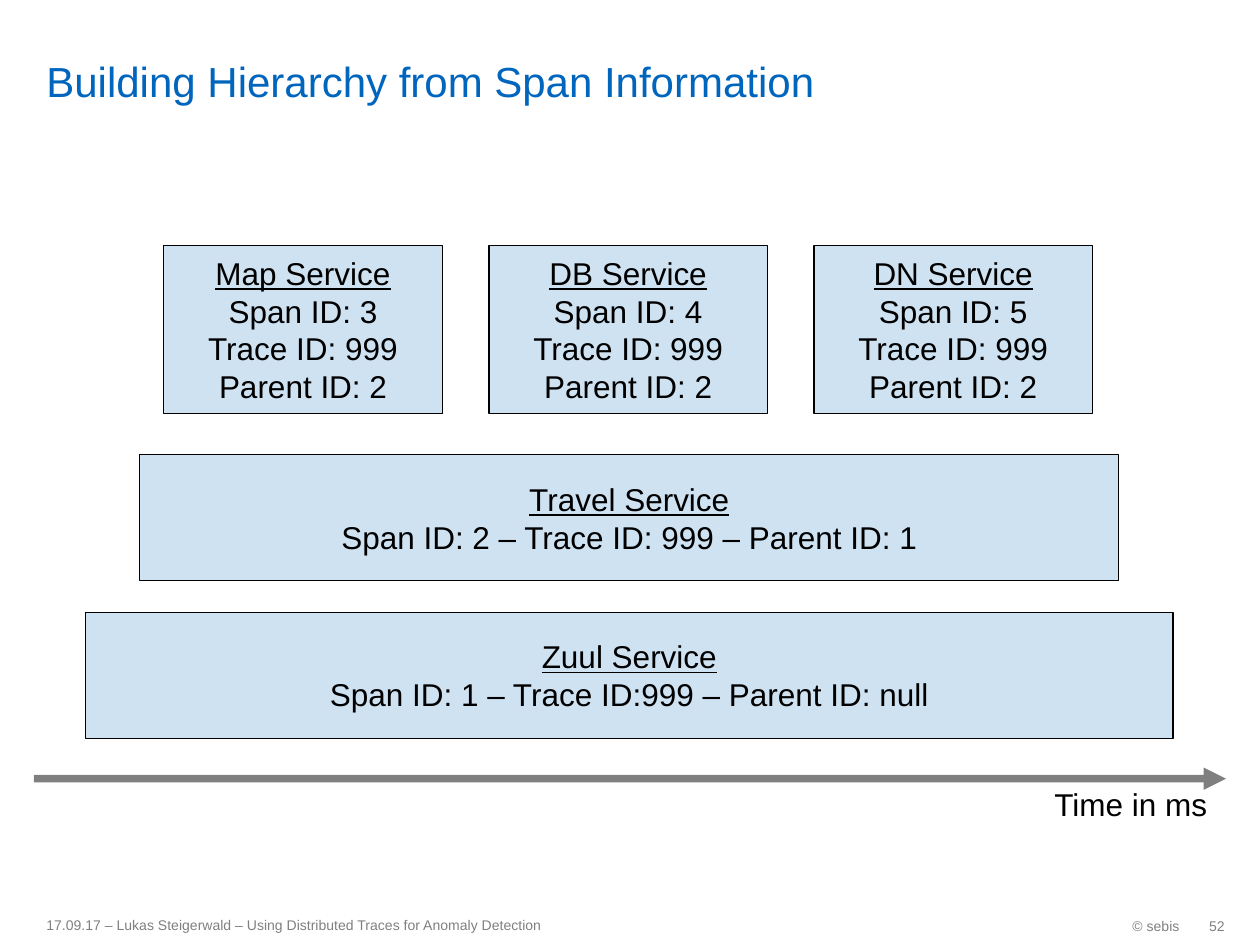
from lxml import etree
from pptx import Presentation
from pptx.dml.color import RGBColor
from pptx.enum.shapes import MSO_CONNECTOR, MSO_SHAPE
from pptx.enum.text import MSO_ANCHOR, PP_ALIGN
from pptx.oxml.ns import qn
from pptx.util import Inches, Pt

BLUE = RGBColor(0x00, 0x65, 0xBD)
BLACK = RGBColor(0, 0, 0)
GRAY = RGBColor(0x80, 0x80, 0x80)
LEFT, CENTER, RIGHT = PP_ALIGN.LEFT, PP_ALIGN.CENTER, PP_ALIGN.RIGHT
TOP, MIDDLE, BOTTOM = MSO_ANCHOR.TOP, MSO_ANCHOR.MIDDLE, MSO_ANCHOR.BOTTOM

# Content
TITLE = "Building Hierarchy from Span Information"
FOOTER = "17.09.17 – Lukas Steigerwald – Using Distributed Traces for Anomaly Detection"
# Wide spans: left, top, width, lines
WIDE_SPANS = [
    (0.68, 4.86, 8.63, ["Zuul Service", "Span ID: 1 – Trace ID:999 – Parent ID: null"]),
    (1.11, 3.61, 7.77, ["Travel Service", "Span ID: 2 – Trace ID: 999 – Parent ID: 1"]),
]
CHILD_SPANS = [("Map Service", 3), ("DB Service", 4), ("DN Service", 5)]
CHILD_LEFT, CHILD_TOP, CHILD_PITCH = 1.3, 1.95, 2.58
CHILD_W, CHILD_H = 2.21, 1.33
AXIS_Y = 6.18
# Labels: text, box, size, colour, alignment, anchor, margins
PLAIN = (0.1, 0.05, 0.1, 0.05)
LABELS = [
    (TITLE, (0.27, 0.05, 8.24, 0.79), 24, BLUE, LEFT, BOTTOM, (0.1, 0, 0.1, 0)),
    ("Time in ms", (8.27, AXIS_Y, 1.43, 0.4), 18, BLACK, LEFT, TOP, PLAIN),
    (FOOTER, (0.27, 7.18, 4.73, 0.32), 8, GRAY, LEFT, MIDDLE, PLAIN),
    ("© sebis", (7.7, 7.19, 1.76, 0.32), 8, GRAY, RIGHT, MIDDLE, PLAIN),
    ("52", (9.45, 7.19, 0.27, 0.32), 8, GRAY, RIGHT, MIDDLE, (0.1, 0.05, 0, 0.05)),
]


def set_alpha(parent, percent):
    color = parent.find(".//" + qn("a:srgbClr"))
    etree.SubElement(color, qn("a:alpha"), val=str(percent * 1000))


def write_lines(tf, lines, size, color, align, anchor, margins=PLAIN, underline_first=False):
    sides = ("margin_left", "margin_top", "margin_right", "margin_bottom")
    for side, value in zip(sides, margins):
        setattr(tf, side, Inches(value))
    tf.word_wrap = True
    tf.vertical_anchor = anchor
    for i, line in enumerate(lines):
        p = tf.paragraphs[0] if i == 0 else tf.add_paragraph()
        p.alignment = align
        r = p.add_run()
        r.text = line
        font = {"name": "Arial", "size": Pt(size), "underline": underline_first and i == 0}
        for key, value in font.items():
            setattr(r.font, key, value)
        r.font.color.rgb = color


def add_span(s, box, lines):
    sp = s.shapes.add_shape(MSO_SHAPE.RECTANGLE, *map(Inches, box))
    sp.shadow.inherit = False
    sp.fill.solid()
    sp.fill.fore_color.rgb = BLUE
    set_alpha(sp.fill._xPr.find(qn("a:solidFill")), 19)
    sp.line.color.rgb = BLACK
    sp.line.width = Pt(0.75)
    write_lines(sp.text_frame, lines, 18, BLACK, CENTER, MIDDLE, underline_first=True)


def add_time_axis(s):
    axis = s.shapes.add_connector(
        MSO_CONNECTOR.STRAIGHT, Inches(0.27), Inches(AXIS_Y), Inches(9.73), Inches(AXIS_Y))
    axis.line.color.rgb = BLACK
    axis.line.width = Pt(4.25)
    ln = axis.line._get_or_add_ln()
    set_alpha(ln, 50)
    etree.SubElement(ln, qn("a:tailEnd"), type="triangle")
    etree.SubElement(axis._element.spPr, qn("a:effectLst"))


def main():
    prs = Presentation()
    prs.slide_width, prs.slide_height = Inches(10), Inches(7.5)
    s = prs.slides.add_slide(prs.slide_layouts[6])

    # Spans, from the root up to the leaves
    for left, top, width, lines in WIDE_SPANS:
        add_span(s, (left, top, width, 1), lines)
    for i, (name, span_id) in enumerate(CHILD_SPANS):
        lines = [name, f"Span ID: {span_id}", "Trace ID: 999", "Parent ID: 2"]
        add_span(s, (CHILD_LEFT + i * CHILD_PITCH, CHILD_TOP, CHILD_W, CHILD_H), lines)

    add_time_axis(s)

    # Title, axis label and footer
    for text, box, *style in LABELS:
        tb = s.shapes.add_textbox(*map(Inches, box))
        write_lines(tb.text_frame, [text], *style)

    prs.save("out.pptx")


if __name__ == "__main__":
    main()
